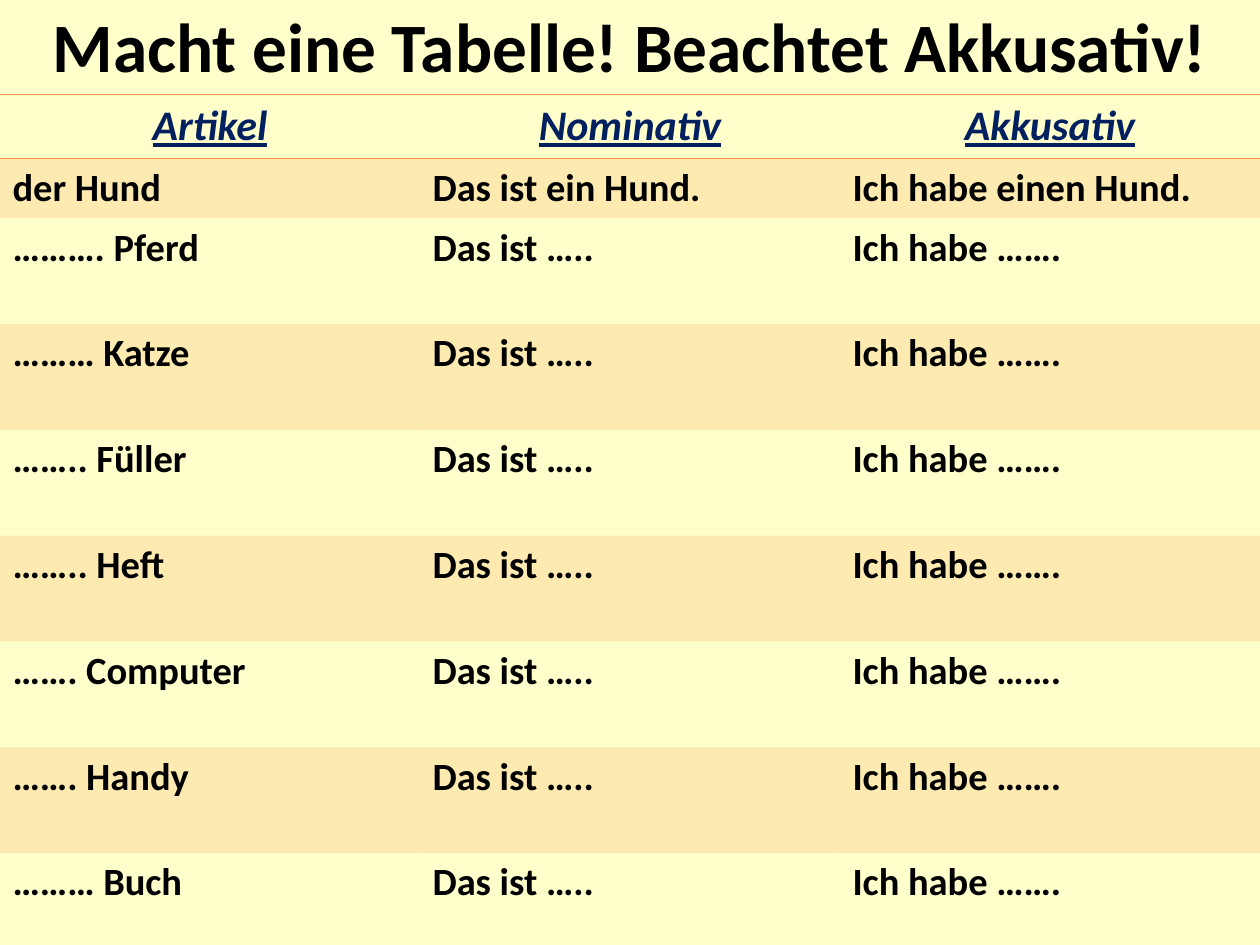
import pptx
import pptx.dml.color
import pptx.enum.text
import pptx.oxml
import pptx.oxml.ns
import pptx.util
from lxml import etree

Inches = pptx.util.Inches
Pt = pptx.util.Pt
RGBColor = pptx.dml.color.RGBColor
PP_ALIGN = pptx.enum.text.PP_ALIGN
qn = pptx.oxml.ns.qn

CREAM = RGBColor(0xFF, 0xFF, 0xCC)
ORANGE = RGBColor(0xF7, 0x96, 0x46)
NAVY = RGBColor(0x00, 0x20, 0x60)
BLACK = RGBColor(0x00, 0x00, 0x00)

PLAIN_TABLE_STYLE = "{2D5ABB26-0587-4C30-8999-92F81FD0307C}"
BAND_ALPHA = 20000

HEADERS = ["Artikel", "Nominativ", "Akkusativ"]
EXAMPLE = ["der Hund", "Das ist ein Hund.", "Ich habe einen Hund."]
NOUNS = ["………. Pferd", "……… Katze", "…….. Füller", "…….. Heft",
         "……. Computer", "……. Handy", "……… Buch"]
ROWS = [HEADERS, EXAMPLE] + [[noun, "Das ist …..", "Ich habe ……."] for noun in NOUNS]
ROW_HEIGHTS = [0.51, 0.47] + [0.84] * len(NOUNS)


class SlideBuilder:
    font = "Calibri"

    def __init__(self, prs):
        self.s = prs.slides.add_slide(prs.slide_layouts[5])
        self.width = prs.slide_width

    def background(self, color):
        fill = self.s.background.fill
        fill.solid()
        fill.fore_color.rgb = color

    def add_text(self, tf, text, size, color, align, emphasis=False):
        p = tf.paragraphs[0]
        p.alignment = align
        r = p.add_run()
        r.text = text
        r.font.name = self.font
        r.font.size = Pt(size)
        r.font.bold = True
        r.font.italic = emphasis
        r.font.underline = emphasis
        r.font.color.rgb = color

    def title(self, text, height):
        sp = self.s.shapes.title
        sp.left, sp.top, sp.width, sp.height = 0, 0, self.width, height
        tf = sp.text_frame
        tf.word_wrap = True
        tf.auto_size = pptx.enum.text.MSO_AUTO_SIZE.NONE
        tf.vertical_anchor = pptx.enum.text.MSO_ANCHOR.MIDDLE
        self.add_text(tf, text, 39.6, BLACK, PP_ALIGN.CENTER)

    def border(self, cell, side):
        ln = etree.SubElement(cell._tc.get_or_add_tcPr(), qn("a:" + side), w=str(Pt(1)))
        fill = etree.SubElement(ln, qn("a:solidFill"))
        etree.SubElement(fill, qn("a:srgbClr"), val=str(ORANGE))

    def band(self, cell):
        cell.fill.solid()
        cell.fill.fore_color.rgb = ORANGE
        color = cell._tc.tcPr.find(qn("a:solidFill")).find(qn("a:srgbClr"))
        etree.SubElement(color, qn("a:alpha"), val=str(BAND_ALPHA))

    def table(self, rows, heights, top):
        frame = self.s.shapes.add_table(len(rows), len(rows[0]), 0, top,
                                        self.width, Inches(sum(heights)))
        table = frame.table
        table.first_row = table.horz_banding = False
        table._tbl.tblPr.find(qn("a:tableStyleId")).text = PLAIN_TABLE_STYLE
        for i, texts in enumerate(rows):
            table.rows[i].height = Inches(heights[i])
            header, last = i == 0, i == len(rows) - 1
            for j, text in enumerate(texts):
                cell = table.cell(i, j)
                if header:
                    self.add_text(cell.text_frame, text, 24, NAVY, PP_ALIGN.CENTER, True)
                    self.border(cell, "lnT")
                else:
                    self.add_text(cell.text_frame, text, 22, BLACK, PP_ALIGN.LEFT)
                if header or last:
                    self.border(cell, "lnB")
                # Every second row is tinted, starting below the header
                if i % 2:
                    self.band(cell)
                else:
                    cell.fill.background()


def main():
    prs = pptx.Presentation()
    prs.slide_width, prs.slide_height = Inches(10), Inches(7.5)
    slide = SlideBuilder(prs)
    slide.background(CREAM)

    # Heading
    slide.title("Macht eine Tabelle! Beachtet Akkusativ!", Inches(0.71))

    # Exercise table
    slide.table(ROWS, ROW_HEIGHTS, Inches(0.75))

    prs.save("out.pptx")


if __name__ == "__main__":
    main()
